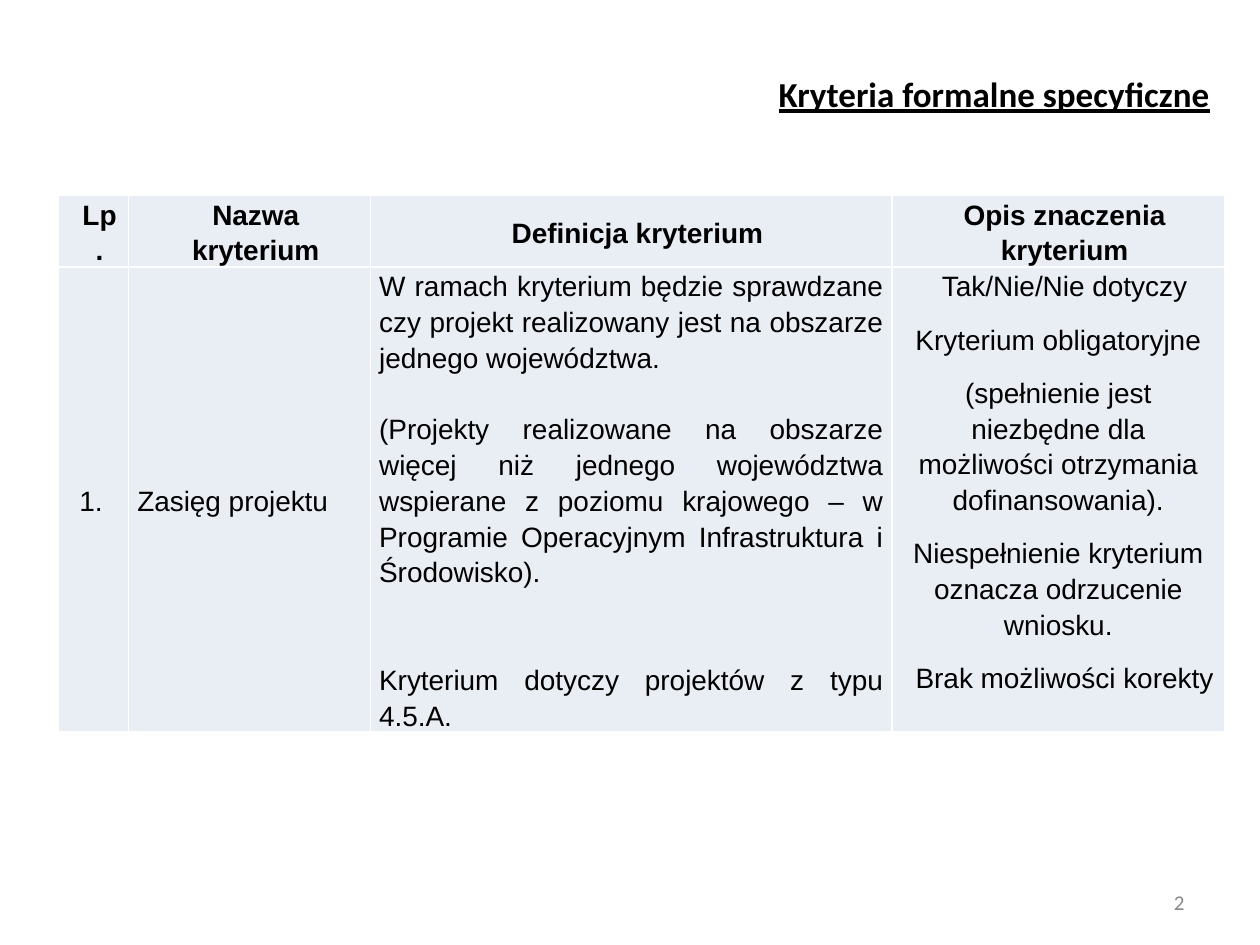
from lxml.etree import SubElement as Sub
from pptx import Presentation
from pptx.dml.color import RGBColor as RGB
from pptx.enum.text import MSO_ANCHOR as Anchor, MSO_AUTO_SIZE as Fit, PP_ALIGN as Align
from pptx.oxml import parse_xml
from pptx.oxml.ns import nsdecls, qn
from pptx.util import Inches, Pt

BLACK = RGB(0, 0, 0)
WHITE = RGB(255, 255, 255)
GREY = RGB(0x89, 0x89, 0x89)
PALE = RGB(0xE9, 0xED, 0xF4)
WIDE, HIGH = Inches(10), Inches(7.5)
COLS = (0.56, 1.92, 4.14, 2.64)
ROWS = (0.56, 3.69)
PAD = Inches(0.07)
STEP = Inches(0.1)
LINE = 20.5

HEADS = ("Lp.", "Nazwa kryterium", "Definicja kryterium", "Opis znaczenia kryterium")
RULES = (
    ("W ramach kryterium będzie sprawdzane czy projekt realizowany jest na "
     "obszarze jednego województwa.", 0),
    ("(Projekty realizowane na obszarze więcej niż jednego województwa "
     "wspierane z poziomu krajowego – w Programie Operacyjnym Infrastruktura "
     "i Środowisko).", LINE),
    ("Kryterium dotyczy projektów z typu 4.5.A.", 2 * LINE),
)
NOTES = (
    ("Tak/Nie/Nie dotyczy", STEP),
    ("Kryterium obligatoryjne", 0),
    ("(spełnienie jest niezbędne dla możliwości otrzymania dofinansowania).", 0),
    ("Niespełnienie kryterium oznacza odrzucenie wniosku.", 0),
    ("Brak możliwości korekty", STEP),
)


def write(frame, text, size=16, face="Arial", color=BLACK, bold=False, under=False,
          align=Align.LEFT, lead=1.0, before=0, after=0, left=0):
    """Write one paragraph, using the first one while it is empty."""
    para = frame.paragraphs[0]
    if para.runs:
        para = frame.add_paragraph()
    para.alignment, para.line_spacing = align, lead
    para.space_before, para.space_after = Pt(before), Pt(after)
    props = para._p.get_or_add_pPr()
    props.set("marL", str(int(left)))
    props.set("indent", "0")
    run = para.add_run()
    run.text = text
    font = run.font
    font.name, font.size, font.bold, font.underline = face, Pt(size), bold, under
    font.color.rgb = color


def share(x, y, w, h):
    """Turn shares of the slide into a box of lengths."""
    return int(x * WIDE), int(y * HIGH), int(w * WIDE), int(h * HIGH)


def head(slide, box):
    """Place the title in its box."""
    title = slide.shapes.title
    title.left, title.top, title.width, title.height = box
    frame = title.text_frame
    frame.auto_size, frame.word_wrap = Fit.NONE, True
    frame.vertical_anchor = Anchor.TOP
    write(frame, "Kryteria formalne specyficzne", size=20, face="Calibri",
          bold=True, under=True, align=Align.RIGHT)


def style(cell, anchor):
    """Give a cell its fill, insets and white borders."""
    cell.fill.solid()
    cell.fill.fore_color.rgb = PALE
    cell.margin_left = cell.margin_right = PAD
    cell.margin_top = cell.margin_bottom = 0
    cell.vertical_anchor = anchor
    props = cell._tc.get_or_add_tcPr()
    for spot, side in enumerate("LRTB"):
        edge = parse_xml(f'<a:ln{side} {nsdecls("a")} w="{int(Pt(1))}"/>')
        Sub(Sub(edge, qn("a:solidFill")), qn("a:srgbClr"), val=str(WHITE))
        props.insert(spot, edge)


def grid(slide, box):
    """Place the table of criteria in its box."""
    x, y, w, h = box
    table = slide.shapes.add_table(len(ROWS), len(COLS), x, y, w, h).table
    for col, part in zip(table.columns, COLS):
        col.width = int(w * part / sum(COLS))
    for row, part in zip(table.rows, ROWS):
        row.height = int(h * part / sum(ROWS))
    for col, text in enumerate(HEADS):
        cell = table.cell(0, col)
        style(cell, Anchor.MIDDLE)
        write(cell.text_frame, text, bold=True, align=Align.CENTER,
              lead=1.15, after=10, left=STEP)
        style(table.cell(1, col), Anchor.MIDDLE if col < 2 else Anchor.TOP)
    count, name, rule, note = (table.cell(1, col).text_frame for col in range(4))
    write(count, "1.", lead=1.15, after=10, left=STEP)
    write(name, "Zasięg projektu", lead=1.15)
    for text, gap in RULES:
        write(rule, text, align=Align.JUSTIFY, lead=1.15, before=gap)
    for text, left in NOTES:
        write(note, text, align=Align.CENTER, lead=1.15, after=10, left=left)


def foot(slide, box):
    """Place the page number in its box."""
    frame = slide.shapes.add_textbox(*box).text_frame
    frame.word_wrap = True
    frame.vertical_anchor = Anchor.MIDDLE
    write(frame, "2", size=12, face="Calibri", color=GREY, align=Align.RIGHT)


def main():
    """Build and save the slide."""
    deck = Presentation()
    deck.slide_width, deck.slide_height = WIDE, HIGH
    slide = deck.slides.add_slide(deck.slide_layouts[5])
    head(slide, share(0.42, 0.07, 0.55, 0.06))
    grid(slide, (Inches(0.46), Inches(1.55), Inches(sum(COLS)), Inches(sum(ROWS))))
    foot(slide, share(0.72, 0.93, 0.23, 0.05))
    deck.save("out.pptx")


if __name__ == "__main__":
    main()
